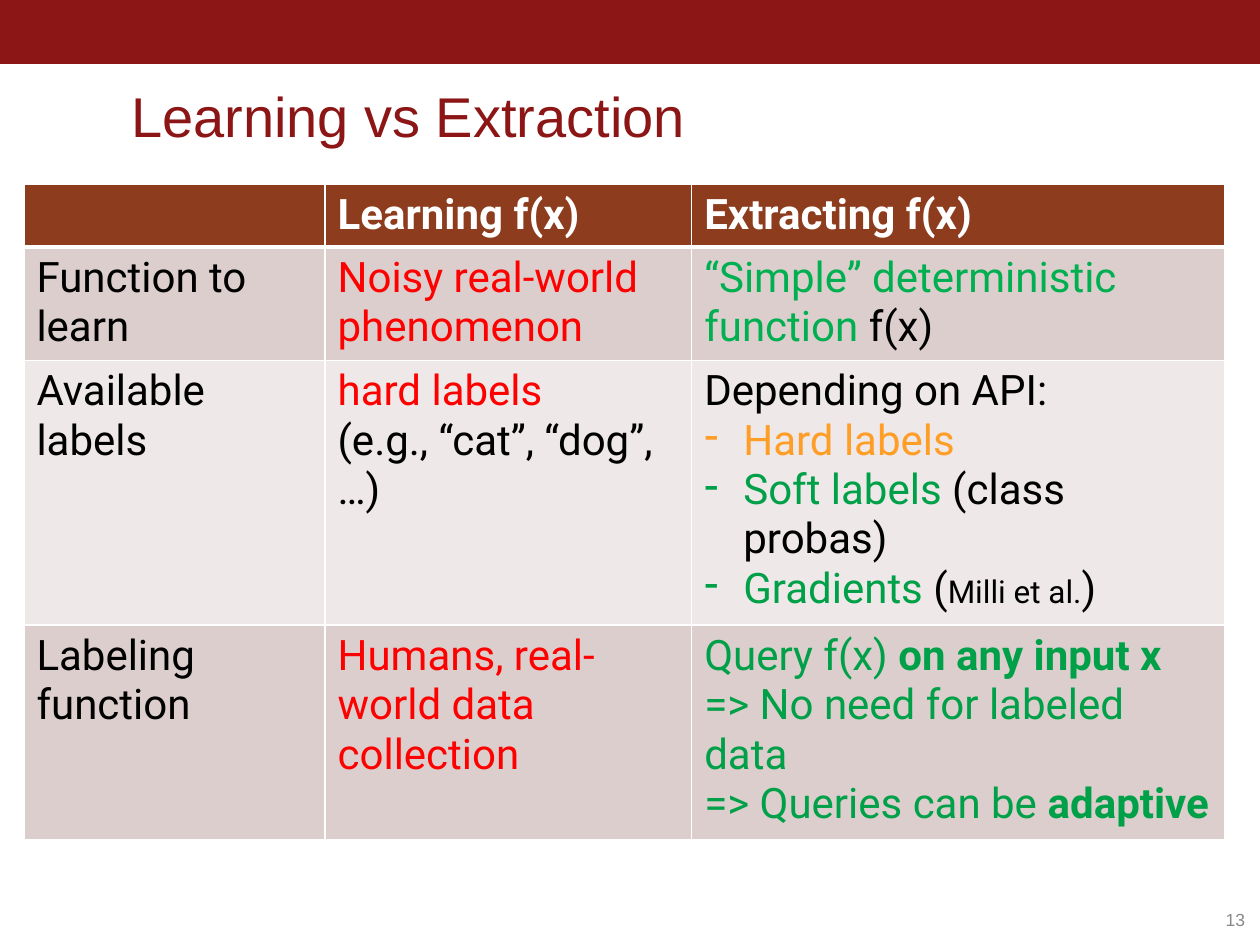
from lxml import etree
from pptx import Presentation
from pptx.dml.color import RGBColor
from pptx.enum.shapes import MSO_SHAPE
from pptx.enum.text import MSO_ANCHOR, PP_ALIGN
from pptx.oxml.ns import qn
from pptx.util import Inches, Pt

RECTANGLE = MSO_SHAPE.RECTANGLE
ANCHOR_BOTTOM, ANCHOR_MIDDLE = MSO_ANCHOR.BOTTOM, MSO_ANCHOR.MIDDLE
ALIGN_LEFT, ALIGN_RIGHT = PP_ALIGN.LEFT, PP_ALIGN.RIGHT

CARDINAL = RGBColor(0x8C, 0x15, 0x15)
HEADER_FILL = RGBColor(0x8D, 0x3C, 0x1E)
DARK_BAND = RGBColor(0xDB, 0xCE, 0xCD)
LIGHT_BAND = RGBColor(0xEE, 0xE8, 0xE8)
WHITE = RGBColor(0xFF, 0xFF, 0xFF)
BLACK = RGBColor(0, 0, 0)
RED = RGBColor(0xFF, 0, 0)
LIGHT_GREEN = RGBColor(0, 0xB0, 0x50)
GREEN = RGBColor(0, 0xA0, 0x48)
ORANGE = RGBColor(0xFF, 0x9E, 0x26)
GRAY = RGBColor(0x89, 0x89, 0x89)

TITLE_FONT, TABLE_FONT = "Arial", "Roboto"
BODY_SIZE, CITATION_SIZE = 24, 18
COLUMN_WIDTHS = [2.39, 2.91, 4.23]
ROW_HEIGHTS = [0.49, 0.88, 2.06, 1.66]


def span(text, color=BLACK, bold=False, size=BODY_SIZE):
    return text, color, bold, size


def line(*spans, bullet=False):
    return spans, bullet


ROWS = [
    [
        [],
        [line(span("Learning f(x)", WHITE, True))],
        [line(span("Extracting f(x)", WHITE, True))],
    ],
    [
        [line(span("Function to learn"))],
        [line(span("Noisy real-world phenomenon", RED))],
        [line(span("“Simple” deterministic function ", LIGHT_GREEN), span("f(x)"))],
    ],
    [
        [line(span("Available labels"))],
        [line(span("hard labels\n", RED), span("(e.g., “cat”, “dog”, …)"))],
        [
            line(span("Depending on API:")),
            line(span("Hard labels", ORANGE), bullet=True),
            line(span("Soft labels", GREEN), span(" (class probas)"), bullet=True),
            line(span("Gradients", GREEN), span(" ("),
                 span("Milli et al.", size=CITATION_SIZE), span(")"), bullet=True),
        ],
    ],
    [
        [line(span("Labeling function"))],
        [line(span("Humans, real-world data collection", RED))],
        [
            line(span("Query f(x) ", GREEN), span("on any input x \n", GREEN, True),
                 span("=> No need for labeled data", GREEN)),
            line(span("=> Queries can be ", GREEN), span("adaptive", GREEN, True)),
        ],
    ],
]


def add_span(para, text, color, bold, size, font_name):
    run = para.add_run()
    run.text = text.rstrip("\n")
    run.font.name = font_name
    run.font.size = Pt(size)
    run.font.bold = bold
    run.font.color.rgb = color
    if text.endswith("\n"):
        para.add_line_break()


def add_bullet(para):
    properties = para._p.get_or_add_pPr()
    indent = Inches(0.31)
    properties.set("marL", str(indent))
    properties.set("indent", str(-indent))
    etree.SubElement(properties, qn("a:buChar"), char="-")


def set_border(cell, side, width):
    border = etree.SubElement(cell._tc.get_or_add_tcPr(), qn(f"a:ln{side}"), w=str(Pt(width)))
    fill = etree.SubElement(border, qn("a:solidFill"))
    etree.SubElement(fill, qn("a:srgbClr"), val=str(WHITE))


def fill_cell(cell, lines, color, top, bottom):
    for side, width in (("L", 1), ("R", 1), ("T", top), ("B", bottom)):
        set_border(cell, side, width)
    cell.fill.solid()
    cell.fill.fore_color.rgb = color
    for index, (spans, bullet) in enumerate(lines):
        frame = cell.text_frame
        para = frame.add_paragraph() if index else frame.paragraphs[0]
        if bullet:
            add_bullet(para)
        for parts in spans:
            add_span(para, *parts, TABLE_FONT)


def add_comparison(page):
    frame = page.shapes.add_table(
        len(ROWS), len(COLUMN_WIDTHS), Inches(0.19), Inches(1.46),
        Inches(sum(COLUMN_WIDTHS)), Inches(sum(ROW_HEIGHTS)))
    table = frame.table
    for column, width in zip(table.columns, COLUMN_WIDTHS):
        column.width = Inches(width)
    fills = [HEADER_FILL, DARK_BAND, LIGHT_BAND, DARK_BAND]
    for index, (row, height, color) in enumerate(zip(table.rows, ROW_HEIGHTS, fills)):
        row.height = Inches(height)
        top = 3 if index == 1 else 1
        bottom = 3 if index == 0 else 1
        for cell, lines in zip(row.cells, ROWS[index]):
            fill_cell(cell, lines, color, top, bottom)


def add_banner(page):
    banner = page.shapes.add_shape(RECTANGLE, Inches(-0.01), 0, Inches(10.01), Inches(0.5))
    banner.shadow.inherit = False
    banner.fill.solid()
    banner.fill.fore_color.rgb = CARDINAL
    banner.line.color.rgb = CARDINAL
    banner.line.width = Pt(0.75)


def add_label(page, bounds, text, size, color, anchor, align=ALIGN_LEFT):
    box = page.shapes.add_textbox(*map(Inches, bounds))
    frame = box.text_frame
    frame.word_wrap = True
    frame.vertical_anchor = anchor
    para = frame.paragraphs[0]
    para.alignment = align
    add_span(para, text, color, False, size, TITLE_FONT)
    return frame


def main():
    deck = Presentation()
    deck.slide_width, deck.slide_height = Inches(10), Inches(7.5)
    page = deck.slides.add_slide(deck.slide_layouts[6])
    add_banner(page)
    title = add_label(page, (1.04, 0.52, 8.43, 0.71), "Learning vs Extraction",
                      32, CARDINAL, ANCHOR_BOTTOM)
    title.margin_left = 0
    title.paragraphs[0].line_spacing = 0.85
    add_comparison(page)
    add_label(page, (9.05, 7.1, 0.93, 0.4), "13", 10, GRAY, ANCHOR_MIDDLE, ALIGN_RIGHT)
    deck.save("out.pptx")


if __name__ == "__main__":
    main()
